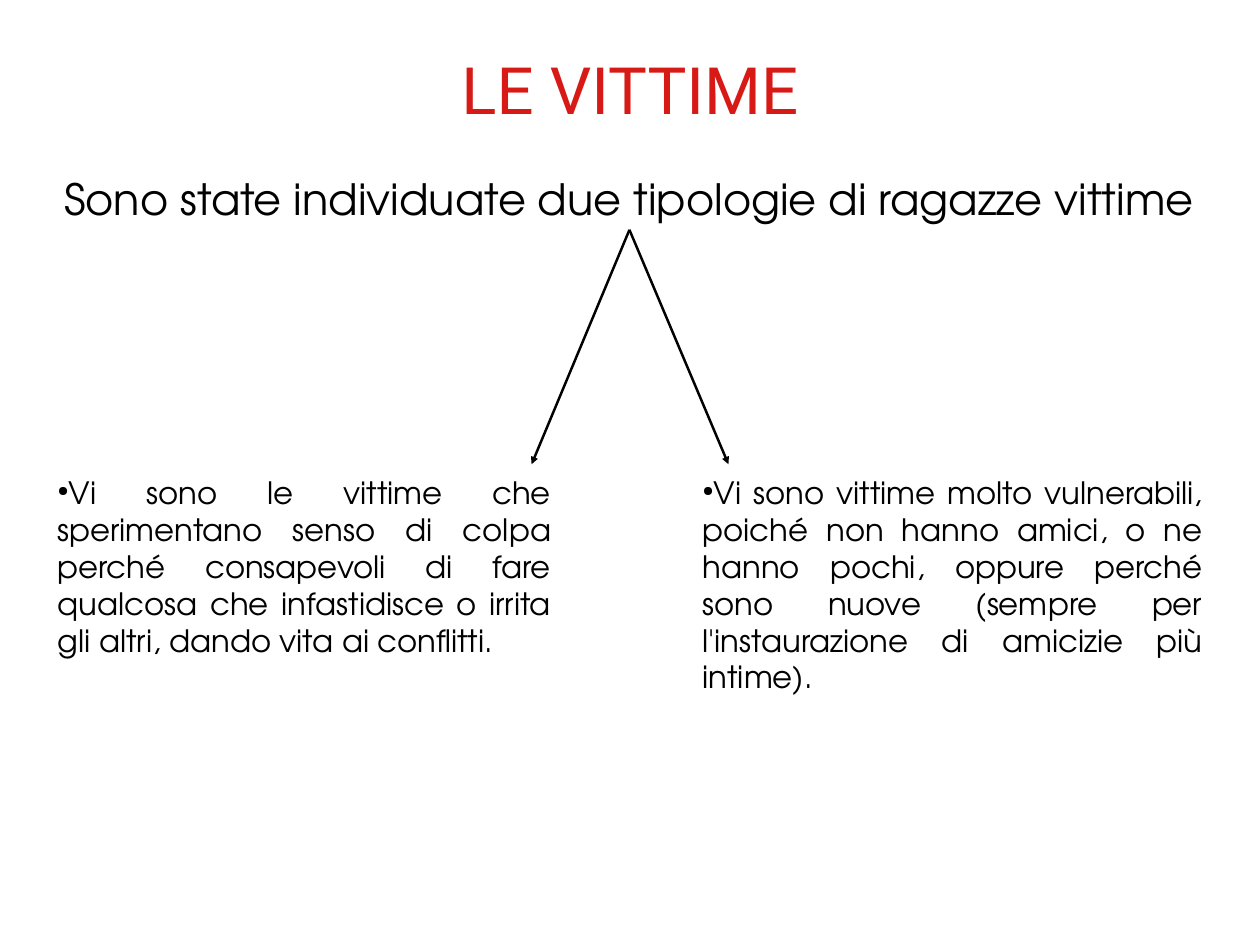
"""Build the slide on the two types of victims."""
import dataclasses

import lxml.etree
import pptx
import pptx.dml.color
import pptx.enum.shapes
import pptx.enum.text
import pptx.oxml.ns
import pptx.shapes.autoshape
import pptx.slide
import pptx.text.text
import pptx.util

Pt = pptx.util.Pt
Align = pptx.enum.text.PP_ALIGN
AutoSize = pptx.enum.text.MSO_AUTO_SIZE


@dataclasses.dataclass(frozen=True)
class Theme:
    red: str = "D71A16"
    black: str = "000000"
    heading_font: str = "Roboto"
    body_font: str = "TeX Gyre Adventor"
    title_size: float = 53
    intro_size: float = 35
    body_size: float = 25
    arrow_width: float = 2


@dataclasses.dataclass(frozen=True)
class Typology:
    text: str
    left: float
    width: float
    arrow_tip: float


THEME = Theme()
CENTRE = 512
TIP_OFFSET = 80
TIP_TOP = 377.3
COLUMN_TOP = 385
COLUMN_HEIGHT = 230
TYPOLOGIES = (
    Typology(
        "Vi sono le vittime che sperimentano senso di colpa perché consapevoli di fare "
        "qualcosa che infastidisce o irrita gli altri, dando vita ai conflitti.",
        46.8, 401, CENTRE - TIP_OFFSET,
    ),
    Typology(
        "Vi sono vittime molto vulnerabili, poiché non hanno amici, o ne hanno pochi, "
        "oppure perché sono nuove (sempre per l'instaurazione di amicizie più intime).",
        571, 406, CENTRE + TIP_OFFSET,
    ),
)


def set_insets(frame: pptx.text.text.TextFrame, inset: float) -> None:
    frame.margin_left = frame.margin_right = Pt(inset)
    frame.margin_top = frame.margin_bottom = Pt(inset)


def write(frame: pptx.text.text.TextFrame, text: str, font: str, size: float,
          colour: str, align: Align) -> None:
    paragraph = frame.paragraphs[0]
    paragraph.alignment = align
    run = paragraph.add_run()
    run.text = text
    run.font.name = font
    run.font.size = Pt(size)
    run.font.color.rgb = pptx.dml.color.RGBColor.from_string(colour)


def add_title(slide: pptx.slide.Slide) -> None:
    title = slide.shapes.title
    title.left, title.top, title.width, title.height = Pt(161), Pt(29.5), Pt(702), Pt(84)
    frame = title.text_frame
    frame.auto_size = AutoSize.NONE
    frame.vertical_anchor = pptx.enum.text.MSO_ANCHOR.MIDDLE
    set_insets(frame, 0)
    write(frame, "LE VITTIME", THEME.heading_font, THEME.title_size, THEME.red, Align.CENTER)


def add_intro(slide: pptx.slide.Slide) -> pptx.shapes.autoshape.Shape:
    intro = slide.shapes.add_textbox(Pt(46.8), Pt(135.4), Pt(929.5), Pt(51.4))
    frame = intro.text_frame
    frame.word_wrap = False
    frame.auto_size = AutoSize.SHAPE_TO_FIT_TEXT
    frame.vertical_anchor = pptx.enum.text.MSO_ANCHOR.MIDDLE
    set_insets(frame, 4.3)
    write(frame, "Sono state individuate due tipologie di ragazze vittime",
          THEME.body_font, THEME.intro_size, THEME.black, Align.CENTER)
    return intro


def add_column(slide: pptx.slide.Slide, typology: Typology) -> None:
    column = slide.shapes.add_textbox(
        Pt(typology.left), Pt(COLUMN_TOP), Pt(typology.width), Pt(COLUMN_HEIGHT))
    frame = column.text_frame
    frame.word_wrap = True
    set_insets(frame, 0)
    write(frame, typology.text, THEME.body_font, THEME.body_size, THEME.black, Align.JUSTIFY)
    properties = frame.paragraphs[0]._p.get_or_add_pPr()
    properties.set("marL", "0")
    properties.set("indent", "0")
    qn = pptx.oxml.ns.qn
    lxml.etree.SubElement(properties, qn("a:buSzPct"), val="45000")
    lxml.etree.SubElement(properties, qn("a:buChar"), char="●")


def add_arrow(slide: pptx.slide.Slide, intro: pptx.shapes.autoshape.Shape,
              typology: Typology) -> None:
    arrow = slide.shapes.add_connector(
        pptx.enum.shapes.MSO_CONNECTOR.STRAIGHT,
        Pt(CENTRE), intro.top + intro.height, Pt(typology.arrow_tip), Pt(TIP_TOP))
    arrow.begin_connect(intro, 2)
    arrow.line.width = Pt(THEME.arrow_width)
    arrow.line.color.rgb = pptx.dml.color.RGBColor.from_string(THEME.black)
    qn = pptx.oxml.ns.qn
    lxml.etree.SubElement(arrow.line._get_or_add_ln(), qn("a:tailEnd"), type="triangle")
    lxml.etree.SubElement(arrow._element.spPr, qn("a:effectLst"))


def main() -> None:
    presentation = pptx.Presentation()
    presentation.slide_width, presentation.slide_height = Pt(1024), Pt(768)
    slide = presentation.slides.add_slide(presentation.slide_layouts[5])
    add_title(slide)
    intro = add_intro(slide)
    for typology in TYPOLOGIES:
        add_column(slide, typology)
        add_arrow(slide, intro, typology)
    presentation.save("out.pptx")


if __name__ == "__main__":
    main()
